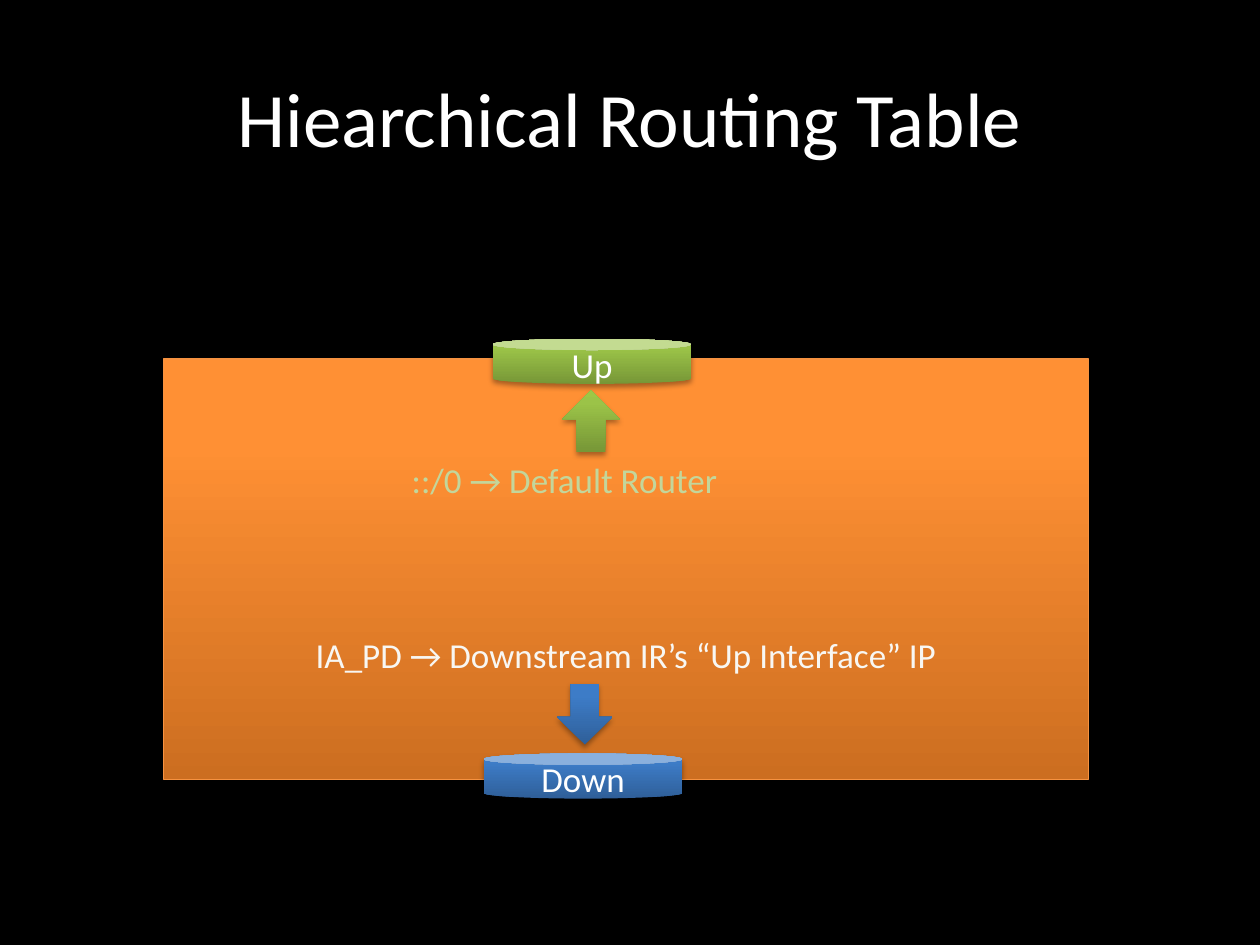
from copy import deepcopy
from dataclasses import dataclass

from lxml.etree import SubElement
from pptx import Presentation
from pptx.dml.color import RGBColor
from pptx.enum.shapes import MSO_SHAPE
from pptx.enum.text import MSO_ANCHOR, MSO_AUTO_SIZE, PP_ALIGN
from pptx.oxml.ns import qn
from pptx.shapes.autoshape import Shape
from pptx.slide import Slide
from pptx.text.text import TextFrame
from pptx.util import Cm, Pt


@dataclass(frozen=True)
class Theme:
    font: str = "Calibri"
    title_size: int = 44
    label_size: int = 20
    background: str = "000000"
    text: str = "FFFFFF"
    up_route: str = "C3D69B"
    down_route: str = "F8F7F3"
    router_line: str = "F69240"
    # Gradient colours run from the bottom edge to the top edge.
    orange: tuple[str, str, str] = ("CC6E20", "FF9034", "FF9136")
    green: tuple[str, str, str] = ("779737", "9BC348", "9DC746")
    blue: tuple[str, str, str] = ("2F5F99", "3D7CC7", "3A7CCB")
    gradient_positions: tuple[float, float, float] = (0, 0.8, 1)


@dataclass(frozen=True)
class Box:
    """Place and size in centimetres."""
    left: float
    top: float
    width: float
    height: float

    def lengths(self) -> tuple[Cm, Cm, Cm, Cm]:
        return Cm(self.left), Cm(self.top), Cm(self.width), Cm(self.height)


@dataclass(frozen=True)
class Block:
    kind: MSO_SHAPE
    box: Box
    colors: tuple[str, str, str]
    label: str = ""
    line: str = ""


@dataclass(frozen=True)
class Route:
    text: str
    box: Box
    color: str
    align: PP_ALIGN


THEME = Theme()
ROUTER = Box(3.3, 7.24, 18.64, 8.48)

ROUTER_BLOCK = Block(MSO_SHAPE.RECTANGLE, ROUTER, THEME.orange, line=THEME.router_line)
INTERFACES = (
    Block(MSO_SHAPE.CAN, Box(9.93, 6.83, 4.01, 0.91), THEME.green, "Up"),
    Block(MSO_SHAPE.CAN, Box(9.75, 15.19, 4.01, 0.91), THEME.blue, "Down"),
)
ROUTES = (
    Route("::/0 → Default Router", Box(8.05, 9.12, 8.31, 1.12),
          THEME.up_route, PP_ALIGN.LEFT),
    Route("IA_PD → Downstream IR’s “Up Interface” IP",
          Box(ROUTER.left, 12.65, ROUTER.width, 1.12),
          THEME.down_route, PP_ALIGN.CENTER),
)
ARROWS = (
    Block(MSO_SHAPE.UP_ARROW, Box(11.33, 7.87, 1.17, 1.24), THEME.green),
    Block(MSO_SHAPE.DOWN_ARROW, Box(11.23, 13.79, 1.12, 1.22), THEME.blue),
)


def write(frame: TextFrame, text: str, size: int, color: str,
          align: PP_ALIGN = PP_ALIGN.CENTER) -> None:
    frame.text = text
    paragraph = frame.paragraphs[0]
    paragraph.alignment = align
    font = paragraph.runs[0].font
    font.name = THEME.font
    font.size = Pt(size)
    font.color.rgb = RGBColor.from_string(color)


def fill_gradient(shape: Shape, colors: tuple[str, str, str]) -> None:
    shape.fill.gradient()
    shape.fill.gradient_angle = 90
    stop_list = next(shape.element.iter(qn("a:gsLst")))
    stop_list.append(deepcopy(stop_list[-1]))
    for stop, position, color in zip(shape.fill.gradient_stops,
                                     THEME.gradient_positions, colors):
        stop.position = position
        stop.color.rgb = RGBColor.from_string(color)


def add_shadow(shape: Shape) -> None:
    shape.shadow.inherit = False
    effects = shape.element.spPr.find(qn("a:effectLst"))
    shadow = SubElement(effects, qn("a:outerShdw"), blurRad=str(Pt(3.1)),
                        dist=str(Pt(1.8)), dir="5400000", rotWithShape="0")
    color = SubElement(shadow, qn("a:srgbClr"), val="000000")
    SubElement(color, qn("a:alpha"), val="35000")


def draw_block(slide: Slide, block: Block) -> None:
    shape = slide.shapes.add_shape(block.kind, *block.box.lengths())
    fill_gradient(shape, block.colors)
    if block.line:
        shape.line.color.rgb = RGBColor.from_string(block.line)
        shape.line.width = Pt(0.75)
    else:
        shape.line.fill.background()
    add_shadow(shape)
    if block.label:
        shape.text_frame.vertical_anchor = MSO_ANCHOR.MIDDLE
        write(shape.text_frame, block.label, THEME.label_size, THEME.text)


def draw_route(slide: Slide, route: Route) -> None:
    frame = slide.shapes.add_textbox(*route.box.lengths()).text_frame
    frame.word_wrap = True
    frame.auto_size = MSO_AUTO_SIZE.SHAPE_TO_FIT_TEXT
    write(frame, route.text, THEME.label_size, route.color, route.align)


def draw_title(slide: Slide, text: str) -> None:
    title = slide.shapes.title
    title.left, title.top, title.width, title.height = Box(1.27, 0.76, 22.86, 3.18).lengths()
    title.text_frame.vertical_anchor = MSO_ANCHOR.MIDDLE
    write(title.text_frame, text, THEME.title_size, THEME.text)


def main() -> None:
    presentation = Presentation()
    presentation.slide_width, presentation.slide_height = Cm(25.4), Cm(19.05)
    slide = presentation.slides.add_slide(presentation.slide_layouts.get_by_name("Title Only"))
    slide.background.fill.solid()
    slide.background.fill.fore_color.rgb = RGBColor.from_string(THEME.background)

    draw_title(slide, "Hiearchical Routing Table")
    for block in (ROUTER_BLOCK, *INTERFACES):
        draw_block(slide, block)
    for route in ROUTES:
        draw_route(slide, route)
    for arrow in ARROWS:
        draw_block(slide, arrow)
    presentation.save("out.pptx")


if __name__ == "__main__":
    main()
